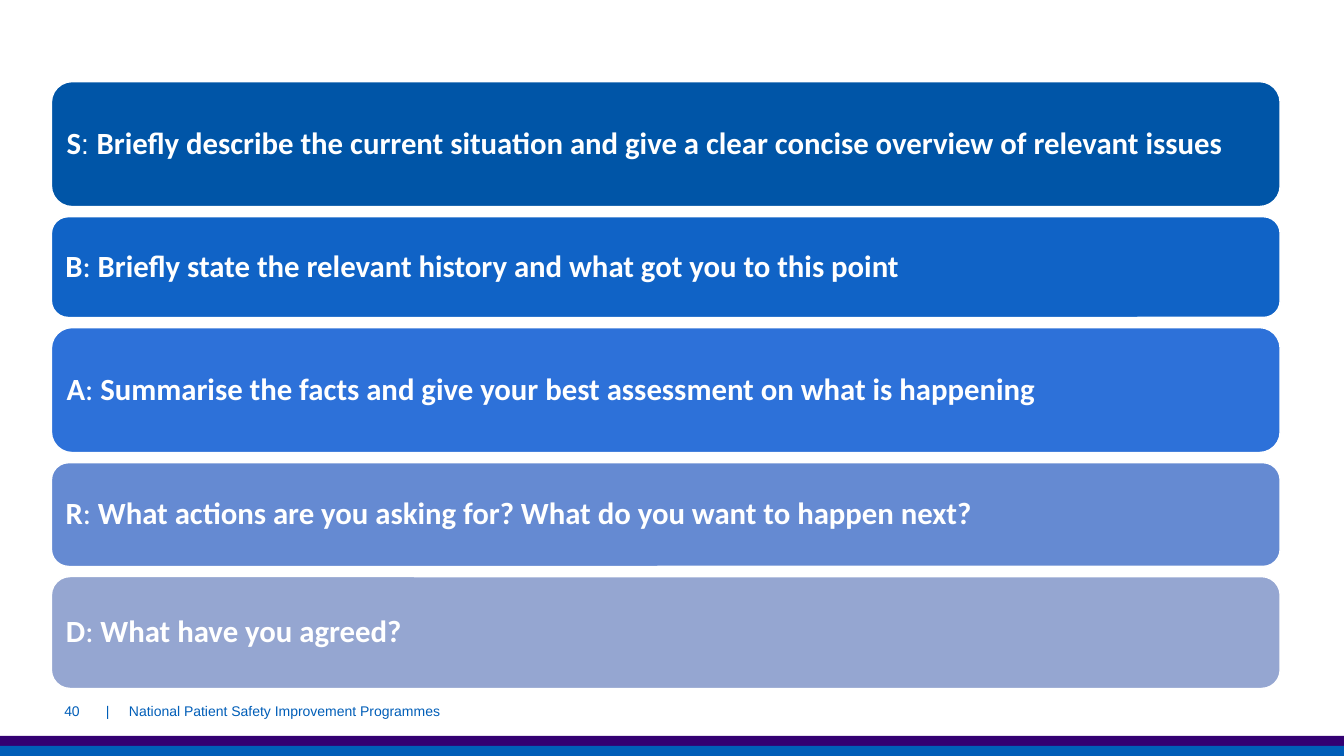
from dataclasses import dataclass

from lxml.etree import SubElement as Sub
from pptx import Presentation
from pptx.dml.color import RGBColor as RGB
from pptx.enum.shapes import MSO_SHAPE as Kind
from pptx.enum.text import MSO_ANCHOR as Anchor, PP_ALIGN as Align
from pptx.oxml.ns import qn
from pptx.shapes.autoshape import Shape
from pptx.slide import Slide
from pptx.text.text import Font
from pptx.util import Inches, Length, Pt


@dataclass(frozen=True)
class Theme:
    head: str = "Calibri"
    body: str = "Arial"
    big: int = 22
    mid: int = 20
    small: int = 10
    white: str = "FFFFFF"
    blue: str = "005EB8"
    purple: str = "330072"


@dataclass(frozen=True)
class Step:
    letter: str
    text: str
    rows: float
    fill: str
    colon: str = Theme.head
    size: int = Theme.big


@dataclass(frozen=True)
class Note:
    text: str
    col: float
    cols: float
    pad: float
    align: Align


# Grid of square cells, ten to the inch
COLS, ROWS = 133.33, 75
LEFT, TOP, WIDE, GAP = 5.1, 8.1, 121.9, 1
PAD = 0.9

STEPS = [
    Step("S", "Briefly describe the current situation and give a clear "
         "concise overview of relevant issues", 12.4, "0055A7",
         Theme.body, Theme.mid),
    Step("B", "Briefly state the relevant history and what got you "
         "to this point", 10, "1063C6"),
    Step("A", "Summarise the facts and give your best assessment on "
         "what is happening", 12.4, "2D71D9"),
    Step("R", "What actions are you asking for? What do you want to "
         "happen next?", 10.3, "658AD2"),
    Step("D", "What have you agreed?", 11.1, "95A6D1"),
]
NOTES = [
    Note("|\tNational Patient Safety Improvement Programmes",
         10.5, 45, 0, Align.LEFT),
    Note("40", 1.3, 7.6, 1, Align.RIGHT),
]
BANDS = [Theme.purple, Theme.blue]


def cell(count: float) -> Length:
    return Inches(count / 10)


def style(font: Font, face: str, size: int, color: str,
          bold: bool = False) -> None:
    font.name, font.size, font.bold = face, Pt(size), bold
    font.color.rgb = RGB.from_string(color)


def block(slide: Slide, kind: Kind, col: float, row: float,
          cols: float, rows: float, fill: str) -> Shape:
    shape = slide.shapes.add_shape(
        kind, cell(col), cell(row), cell(cols), cell(rows))
    shape.shadow.inherit = False
    shape.fill.solid()
    shape.fill.fore_color.rgb = RGB.from_string(fill)
    shape.line.fill.background()
    return shape


def draw_step(slide: Slide, step: Step, row: float) -> None:
    shape = block(slide, Kind.ROUNDED_RECTANGLE,
                  LEFT, row, WIDE, step.rows, step.fill)
    shape.line.color.rgb = RGB.from_string(Theme.white)
    shape.line.width = Pt(1)
    frame = shape.text_frame
    frame.word_wrap = True
    frame.vertical_anchor = Anchor.MIDDLE
    frame.margin_left = frame.margin_right = cell(PAD)
    frame.margin_top = frame.margin_bottom = cell(PAD)
    para = frame.paragraphs[0]
    para.alignment = Align.LEFT
    para.line_spacing = 0.9
    parts = [
        (step.letter, Theme.head, Theme.big, True),
        (": ", step.colon, step.size, False),
        (step.text, Theme.head, Theme.big, True),
    ]
    for text, face, size, bold in parts:
        run = para.add_run()
        run.text = text
        style(run.font, face, size, Theme.white, bold)


def draw_note(slide: Slide, note: Note) -> None:
    box = slide.shapes.add_textbox(
        cell(note.col), cell(68.5), cell(note.cols), cell(4))
    frame = box.text_frame
    frame.word_wrap = True
    frame.vertical_anchor = Anchor.MIDDLE
    frame.margin_left = frame.margin_right = cell(note.pad)
    para = frame.paragraphs[0]
    para.text = note.text
    para.alignment = note.align
    if "\t" in note.text:
        tabs = Sub(para._p.get_or_add_pPr(), qn("a:tabLst"))
        Sub(tabs, qn("a:tab"), pos=str(cell(2.3)), algn="l")
    style(para.runs[0].font, Theme.body, Theme.small, Theme.blue)


def main() -> None:
    deck = Presentation()
    deck.slide_width, deck.slide_height = cell(COLS), cell(ROWS)
    slide = deck.slides.add_slide(deck.slide_layouts[6])

    # Bands along the bottom edge
    for i, color in enumerate(BANDS):
        block(slide, Kind.RECTANGLE, 0, ROWS - len(BANDS) + i,
              COLS, 1, color)

    # Stacked steps
    row = TOP
    for step in STEPS:
        draw_step(slide, step, row)
        row += step.rows + GAP

    # Footer
    for note in NOTES:
        draw_note(slide, note)

    deck.save("out.pptx")


if __name__ == "__main__":
    main()
